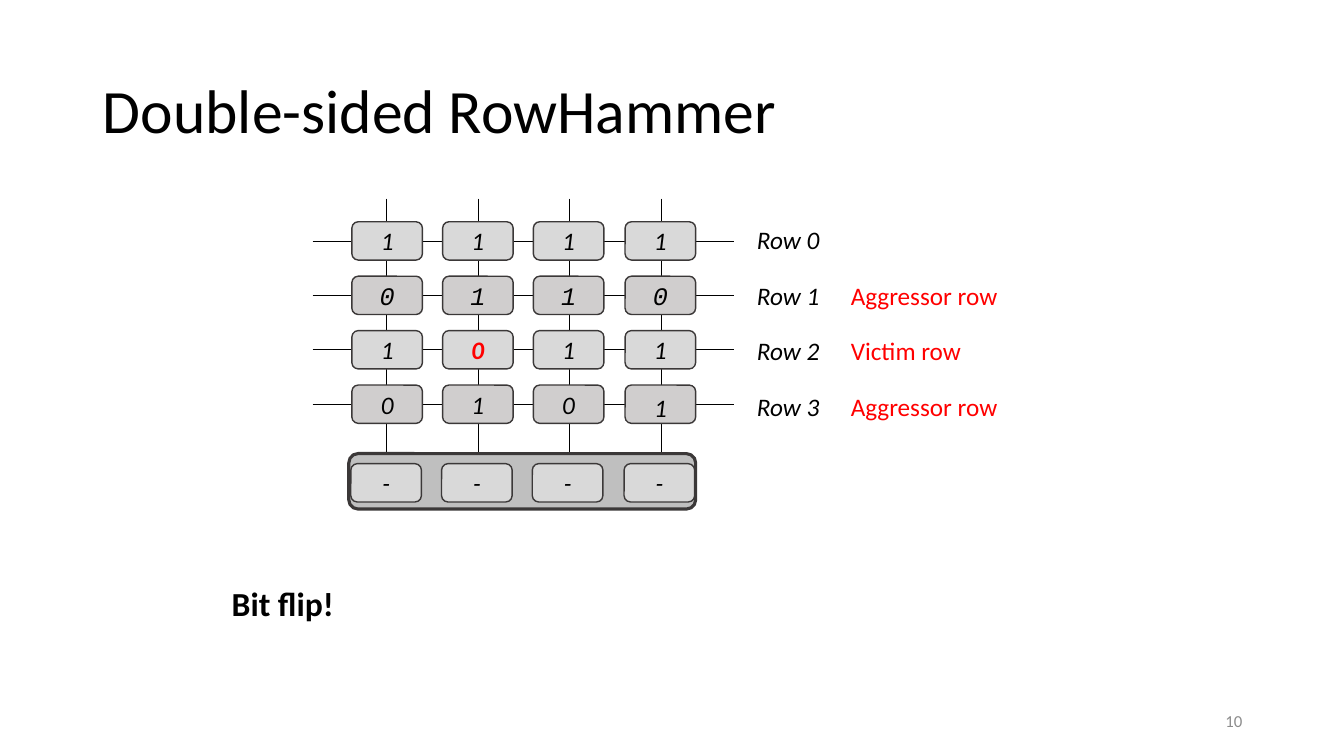
from pptx import Presentation
from pptx.dml.color import RGBColor
from pptx.enum.shapes import MSO_CONNECTOR, MSO_SHAPE
from pptx.enum.text import MSO_ANCHOR, MSO_AUTO_SIZE, PP_ALIGN
from pptx.util import Pt
from lxml import etree

PX = 9144
STRAIGHT = MSO_CONNECTOR.STRAIGHT
ROUNDED = MSO_SHAPE.ROUNDED_RECTANGLE
MIDDLE = MSO_ANCHOR.MIDDLE
GROW = MSO_AUTO_SIZE.SHAPE_TO_FIT_TEXT
LEFT, CENTER, RIGHT = PP_ALIGN.LEFT, PP_ALIGN.CENTER, PP_ALIGN.RIGHT

BLACK = RGBColor(0x00, 0x00, 0x00)
RED = RGBColor(0xFF, 0x00, 0x00)
NUMBER_GRAY = RGBColor(0x8C, 0x8C, 0x8C)
OUTLINE = RGBColor(0x3B, 0x38, 0x38)
LIGHT = RGBColor(0xD9, 0xD9, 0xD9)
DARK = RGBColor(0xD0, 0xCE, 0xCE)
BUFFER = RGBColor(0xBF, 0xBF, 0xBF)
BODY, MONO = "Calibri", "Courier New"

CELL_W, CELL_H = 70, 38
ROWS = [
    ("1111", LIGHT, BODY, ""),
    ("0110", DARK, MONO, "Aggressor row"),
    ("1011", LIGHT, BODY, "Victim row"),
    ("010 ", DARK, BODY, "Aggressor row"),
]
FLIPPED = (2, 1)


def px(*lengths):
    """Turn pixel lengths into EMU."""
    return [round(n * PX) for n in lengths]


def format_text(tf, text, size=18, color=BLACK, font=BODY, bold=False,
                italic=False, align=LEFT):
    """Set the text of a frame and format its only run."""
    tf.text = text
    p = tf.paragraphs[0]
    p.alignment = align
    for r in p.runs:
        r.font.size = Pt(size)
        r.font.name = font
        r.font.bold = bold
        r.font.italic = italic
        r.font.color.rgb = color


def add_label(s, box, text, wrap=False, **style):
    """Add a text box that grows with its text."""
    tf = s.shapes.add_textbox(*px(*box)).text_frame
    format_text(tf, text, **style)
    tf.word_wrap = wrap
    tf.auto_size = GROW
    return tf


def add_wire(s, x1, y1, x2, y2):
    """Add a thin black line without a shadow."""
    wire = s.shapes.add_connector(STRAIGHT, *px(x1, y1, x2, y2))
    wire.line.color.rgb = BLACK
    wire.line.width = Pt(0.5)
    sp_pr = wire._element.spPr
    etree.SubElement(sp_pr, sp_pr.tag.replace("}spPr", "}effectLst").replace(
        "presentationml", "drawingml").replace("/2006/main", "/2006/main"))


def add_block(s, box, fill, width=1):
    """Add a rounded block and return its text frame."""
    sp = s.shapes.add_shape(ROUNDED, *px(*box))
    sp.shadow.inherit = False
    sp.fill.solid()
    sp.fill.fore_color.rgb = fill
    sp.line.color.rgb = OUTLINE
    sp.line.width = Pt(width)
    sp.text_frame.vertical_anchor = MIDDLE
    return sp.text_frame


def add_cells(s, left, top, bits, fill, font=BODY, flipped=None):
    """Add one row of memory cells, with a flipped bit in red."""
    for col, bit in enumerate(bits):
        box = (left + col * 271 // 3, top, CELL_W, CELL_H)
        flip = col == flipped
        format_text(add_block(s, box, fill), bit.strip(), font=font,
                    color=RED if flip else BLACK, bold=flip,
                    italic=True, align=CENTER)


def add_memory_array(s, left, top):
    """Add the wires, memory cells and row buffer."""
    for i in range(4):
        add_wire(s, left, top + 42 + 54 * i, left + 418, top + 42 + 54 * i)
    for i in range(4):
        add_wire(s, left + 73 + 91 * i, top, left + 73 + 91 * i, top + 259)
    for i, (bits, fill, font, _) in enumerate(ROWS):
        flipped = FLIPPED[1] if i == FLIPPED[0] else None
        add_cells(s, left + 39, top + 23 + 54 * i, bits, fill, font, flipped)
    add_label(s, (left + 329, top + 187, 33, 40), "1", italic=True)
    add_block(s, (left + 36, top + 253, 344, 55), BUFFER, 2.25)
    add_cells(s, left + 38, top + 263, "----", LIGHT)


def add_row_labels(s, left, top):
    """Add the row names and the role of each row."""
    for i, (_, _, _, role) in enumerate(ROWS):
        y = top + 55 * i
        add_label(s, (left, y, 83, 40), f"Row {i}", italic=True)
        if role:
            add_label(s, (left + 93, y, 300, 40), role, wrap=True, color=RED)


def add_title(s, box, text):
    """Place and format the title placeholder."""
    title = s.shapes.title
    title.left, title.top, title.width, title.height = px(*box)
    tf = title.text_frame
    format_text(tf, text, size=44)
    tf.vertical_anchor = MIDDLE
    tf.paragraphs[0].line_spacing = 0.9


def add_slide_number(s, box, number):
    """Add the slide number at the lower right."""
    tf = add_label(s, box, number, wrap=True, size=12,
                   color=NUMBER_GRAY, align=RIGHT)
    tf.auto_size = MSO_AUTO_SIZE.NONE
    tf.vertical_anchor = MIDDLE


def main():
    """Build the slide and save it."""
    prs = Presentation()
    prs.slide_width, prs.slide_height = px(1333, 750)
    s = prs.slides.add_slide(prs.slide_layouts[5])
    add_title(s, (92, 40, 1150, 145), "Double-sided RowHammer")
    add_memory_array(s, 310, 197)
    add_row_labels(s, 741, 218)
    add_label(s, (220, 573, 123, 50), "Bit flip!", size=24, bold=True)
    add_slide_number(s, (942, 695, 300, 40), "10")
    prs.save("out.pptx")


if __name__ == "__main__":
    main()
